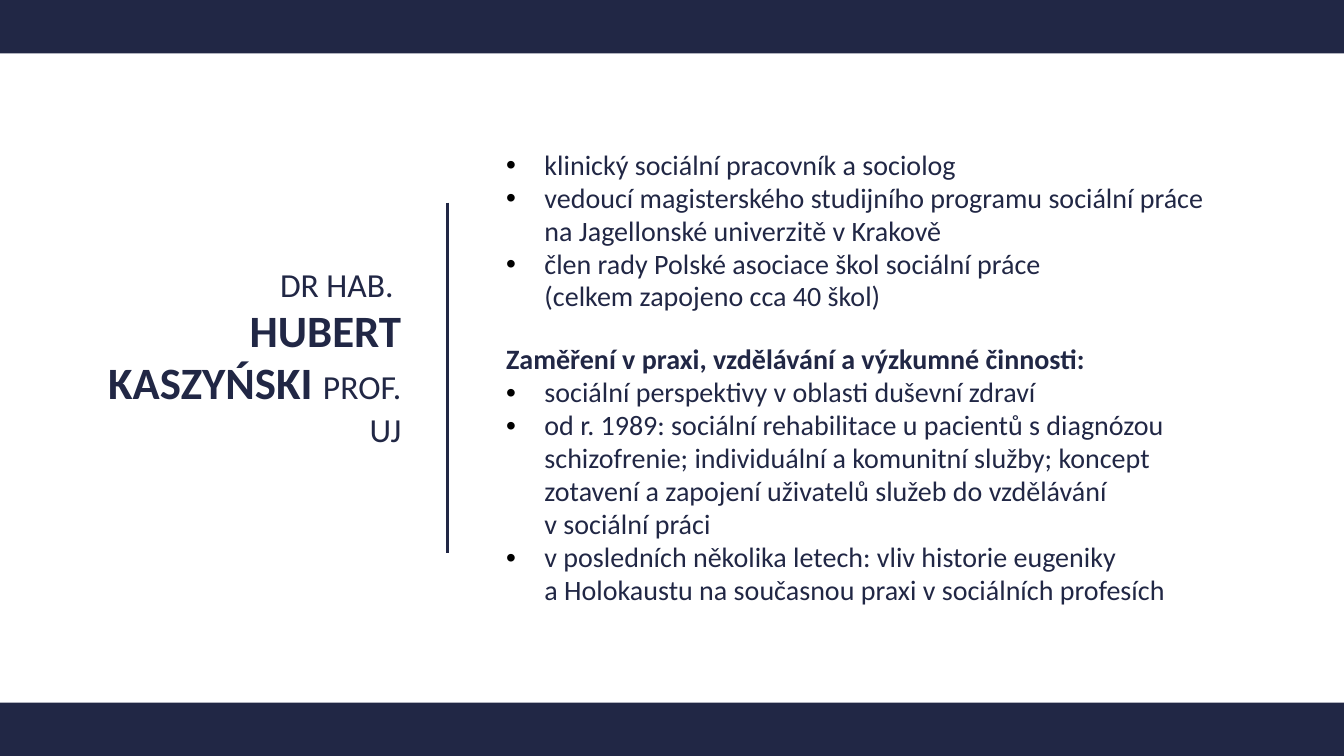
from dataclasses import dataclass

from lxml.etree import SubElement
from pptx import Presentation
from pptx.dml.color import RGBColor
from pptx.enum.shapes import MSO_CONNECTOR as Connector, MSO_SHAPE as Shape
from pptx.enum.text import MSO_ANCHOR as Anchor, MSO_AUTO_SIZE as AutoSize, PP_ALIGN as Align
from pptx.oxml.ns import qn
from pptx.util import Inches, Pt


@dataclass(frozen=True)
class Theme:
    font: str = "Calibri"
    navy: RGBColor = RGBColor(0x21, 0x27, 0x45)
    bullet_color: str = "000000"
    name_size: Pt = Pt(32)
    degree_size: Pt = Pt(24)
    body_size: Pt = Pt(20)
    line_spacing: float = 0.98
    heading_gap: Pt = Pt(21.5)


@dataclass(frozen=True)
class Box:
    left: float
    top: float
    width: float
    height: float


@dataclass(frozen=True)
class Entry:
    text: str
    heading: bool = False


THEME = Theme()
SLIDE_WIDTH, SLIDE_HEIGHT, BAND_HEIGHT = 13.33, 7.5, 0.53
BULLET_INDENT = Inches(0.38)

ENTRIES = [
    Entry("klinický sociální pracovník a sociolog"),
    Entry("vedoucí magisterského studijního programu sociální práce na Jagellonské univerzitě v Krakově"),
    Entry("člen rady Polské asociace škol sociální práce\v(celkem zapojeno cca 40 škol)"),
    Entry("Zaměření v praxi, vzdělávání a výzkumné činnosti:", heading=True),
    Entry("sociální perspektivy v oblasti duševní zdraví"),
    Entry("od r. 1989: sociální rehabilitace u pacientů s diagnózou schizofrenie; individuální "
          "a komunitní služby; koncept zotavení a zapojení uživatelů služeb do vzdělávání\v"
          "v sociální práci"),
    Entry("v posledních několika letech: vliv historie eugeniky\v"
          "a Holokaustu na současnou praxi v sociálních profesích"),
]


def place(placeholder, box: Box):
    """Move a placeholder and return its prepared text frame."""
    placeholder.left, placeholder.top = Inches(box.left), Inches(box.top)
    placeholder.width, placeholder.height = Inches(box.width), Inches(box.height)
    frame = placeholder.text_frame
    frame.word_wrap = True
    frame.auto_size = AutoSize.NONE
    frame.vertical_anchor = Anchor.MIDDLE
    return frame


def style(paragraph, size: Pt) -> None:
    paragraph.line_spacing = THEME.line_spacing
    paragraph.font.name = THEME.font
    paragraph.font.size = size
    paragraph.font.color.rgb = THEME.navy


def set_bullet(paragraph, shown: bool) -> None:
    properties = paragraph._p.get_or_add_pPr()
    indent = BULLET_INDENT if shown else 0
    properties.set("marL", str(int(indent)))
    properties.set("indent", str(-int(indent)))
    if shown:
        color = SubElement(properties, qn("a:buClr"))
        SubElement(color, qn("a:srgbClr"), val=THEME.bullet_color)
        SubElement(properties, qn("a:buFont"), typeface="Arial")
        SubElement(properties, qn("a:buChar"), char="•")
    else:
        SubElement(properties, qn("a:buNone"))


def add_band(slide, top: float) -> None:
    band = slide.shapes.add_shape(
        Shape.RECTANGLE, 0, Inches(top), Inches(SLIDE_WIDTH), Inches(BAND_HEIGHT))
    band.shadow.inherit = False
    band.fill.solid()
    band.fill.fore_color.rgb = THEME.navy
    band.line.fill.background()


def add_divider(slide, x: float, top: float, bottom: float) -> None:
    divider = slide.shapes.add_connector(
        Connector.STRAIGHT, Inches(x), Inches(top), Inches(x), Inches(bottom))
    divider.line.color.rgb = THEME.navy
    divider.line.width = Pt(2)
    SubElement(divider._element.spPr, qn("a:effectLst"))


def fill_name(placeholder) -> None:
    frame = place(placeholder, Box(0.7, 1.45, 3.38, 4.6))
    frame.margin_bottom = Inches(0.45)
    name = frame.paragraphs[0]
    name.alignment = Align.RIGHT
    style(name, THEME.degree_size)
    name.add_run().text = "DR HAB. "
    name.add_line_break()
    person = name.add_run()
    person.text = "HUBERT KASZYŃSKI "
    person.font.size = THEME.name_size
    person.font.bold = True
    name.add_run().text = "PROF. UJ"


def fill_profile(placeholder, entries: list[Entry]) -> None:
    frame = place(placeholder, Box(4.92, 1.23, 7.22, 5.04))
    for index, entry in enumerate(entries):
        paragraph = frame.add_paragraph() if index else frame.paragraphs[0]
        paragraph.text = entry.text
        set_bullet(paragraph, not entry.heading)
        paragraph.space_before = THEME.heading_gap if entry.heading else Pt(0)
        style(paragraph, THEME.body_size)
        paragraph.font.bold = entry.heading


def main() -> None:
    deck = Presentation()
    deck.slide_width, deck.slide_height = Inches(SLIDE_WIDTH), Inches(SLIDE_HEIGHT)
    slide = deck.slides.add_slide(deck.slide_layouts[1])

    # Name on the left, profile on the right
    fill_name(slide.shapes.title)
    fill_profile(slide.placeholders[1], ENTRIES)

    # Divider and edge bands
    add_divider(slide, 4.44, 2.01, 5.49)
    for top in (0, SLIDE_HEIGHT - BAND_HEIGHT):
        add_band(slide, top)

    deck.save("out.pptx")


if __name__ == "__main__":
    main()
